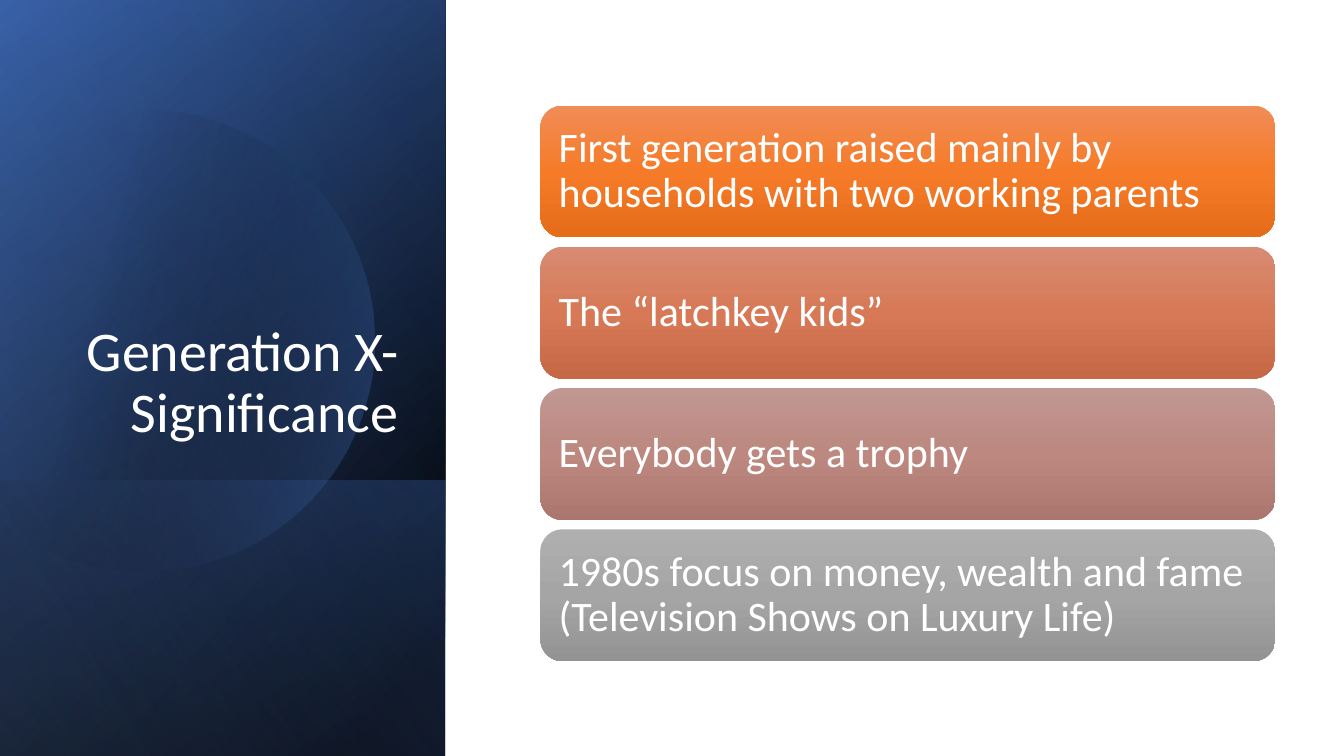
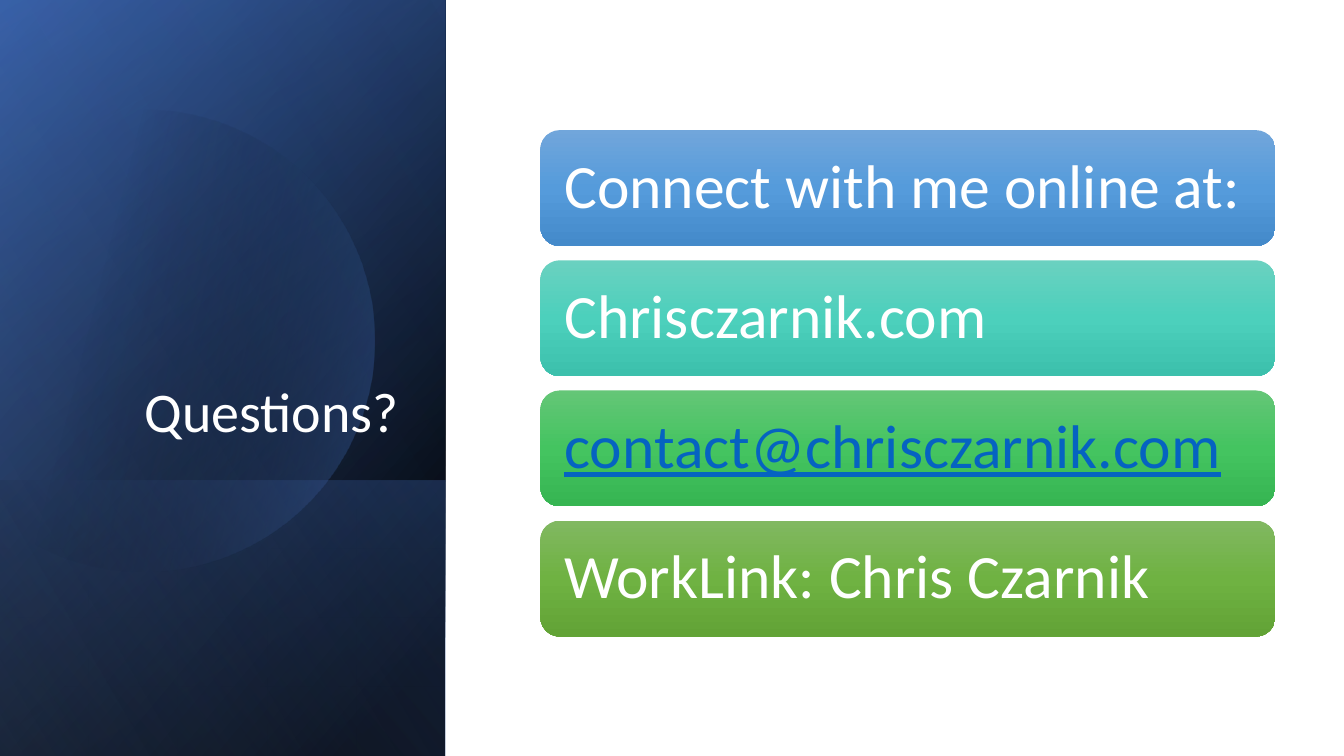
from math import acos, cos, sin

from lxml import etree
from pptx import Presentation
from pptx.dml.color import RGBColor
from pptx.enum.shapes import MSO_SHAPE as Shape
from pptx.enum.text import MSO_ANCHOR as Anchor, PP_ALIGN as Align
from pptx.oxml.ns import qn
from pptx.util import Cm, Pt

FONT = "Calibri"
WHITE = RGBColor(0xFF, 0xFF, 0xFF)
BLACK = RGBColor(0x00, 0x00, 0x00)
NAVY = RGBColor(0x2F, 0x55, 0x97)
BLUE = RGBColor(0x44, 0x72, 0xC4)
PALE_BLUE = RGBColor(0x8F, 0xAA, 0xDC)
LINK_BLUE = RGBColor(0x05, 0x63, 0xC1)

# Card gradients: top, middle, bottom
ORANGE = (RGBColor(0xF1, 0x8C, 0x57), RGBColor(0xF6, 0x7B, 0x28), RGBColor(0xE5, 0x6C, 0x19))
TERRACOTTA = (RGBColor(0xD7, 0x8B, 0x72), RGBColor(0xD7, 0x79, 0x56), RGBColor(0xC6, 0x68, 0x46))
ROSE = (RGBColor(0xC1, 0x97, 0x91), RGBColor(0xBC, 0x88, 0x80), RGBColor(0xAA, 0x76, 0x6E))
GREY = (RGBColor(0xAF, 0xAF, 0xAF), RGBColor(0xA5, 0xA5, 0xA5), RGBColor(0x93, 0x93, 0x93))
SKY = (RGBColor(0x71, 0xA6, 0xDB), RGBColor(0x55, 0x9B, 0xDB), RGBColor(0x44, 0x8A, 0xCA))
TEAL = (RGBColor(0x6A, 0xD1, 0xC0), RGBColor(0x4C, 0xD0, 0xBC), RGBColor(0x3C, 0xC0, 0xAC))
GREEN = (RGBColor(0x64, 0xC6, 0x77), RGBColor(0x44, 0xC4, 0x60), RGBColor(0x36, 0xB5, 0x52))
LIME = (RGBColor(0x81, 0xB8, 0x61), RGBColor(0x6F, 0xB2, 0x42), RGBColor(0x62, 0xA3, 0x36))

# Layout, in centimetres
SLIDE_W, SLIDE_H = 33.87, 19.05
PANEL_W = 11.22
BAND_H = 6.95
DISC_X, DISC_Y, DISC_R = 3.63, 8.59, 5.82
CARD_LEFT, CARD_W, CARDS_MIDDLE = 13.62, 18.52, 9.66

# Title, card height, gap, inset, text size, cards
SLIDES = [
    ("Generation X- Significance", 3.32, 0.24, 0.3, 30, [
        ("First generation raised mainly by households with two working parents", ORANGE),
        ("The “latchkey kids”", TERRACOTTA),
        ("Everybody gets a trophy", ROSE),
        ("1980s focus on money, wealth and fame (Television Shows on Luxury Life)", GREY),
    ]),
    ("Questions?", 2.92, 0.36, 0.46, 44, [
        ("Connect with me online at:", SKY),
        ("Chrisczarnik.com", TEAL),
        ("contact@chrisczarnik.com", GREEN),
        ("WorkLink: Chris Czarnik", LIME),
    ]),
]


def paint(shape, angle, stops):
    """Fill with (position %, colour, opacity %) stops; angle runs clockwise."""
    shape.shadow.inherit = False
    shape.line.fill.background()
    shape.fill.gradient()
    shape.fill.gradient_angle = 360 - angle
    stop_list = shape._element.spPr.find(".//" + qn("a:gsLst"))
    for default_stop in list(stop_list):
        stop_list.remove(default_stop)
    for position, colour, opacity in stops:
        stop = etree.SubElement(stop_list, qn("a:gs"), pos=str(position * 1000))
        rgb = etree.SubElement(stop, qn("a:srgbClr"), val=str(colour))
        if opacity < 100:
            etree.SubElement(rgb, qn("a:alpha"), val=str(opacity * 1000))


def add_layer(slide, height, angle, stops):
    """Panel layer of the given height at the foot of the slide, turned and mirrored."""
    middle = SLIDE_H - height / 2
    layer = slide.shapes.add_shape(
        Shape.RECTANGLE, Cm((PANEL_W - height) / 2), Cm(middle - PANEL_W / 2),
        Cm(height), Cm(PANEL_W))
    layer.rotation = 90
    layer._element.spPr.find(qn("a:xfrm")).set("flipH", "1")
    paint(layer, angle, stops)


prs = Presentation()
prs.slide_width, prs.slide_height = Cm(SLIDE_W), Cm(SLIDE_H)

# Disc outline, cut off by the left edge of the slide
half_arc = acos(-DISC_X / DISC_R)
arc_angles = [half_arc * (step / 60 - 1) for step in range(121)]
disc_points = [(Cm(DISC_X + DISC_R * cos(a)), Cm(DISC_Y + DISC_R * sin(a)))
               for a in arc_angles]

for heading, card_h, gap, inset, text_size, cards in SLIDES:
    slide = prs.slides.add_slide(prs.slide_layouts[6])

    # Side panel
    add_layer(slide, SLIDE_H, 50, [(8, BLACK, 100), (100, NAVY, 100)])
    add_layer(slide, SLIDE_H, 30, [(0, BLACK, 0), (99, BLUE, 46)])
    add_layer(slide, BAND_H, 130, [(2, BLUE, 29), (100, BLACK, 30)])
    outline = slide.shapes.build_freeform(*disc_points[0])
    outline.add_line_segments(disc_points[1:], close=True)
    paint(outline.convert_to_shape(), 14, [(29, BLACK, 0), (100, BLUE, 43)])
    add_layer(slide, SLIDE_H, 120, [(0, BLACK, 0), (99, PALE_BLUE, 11)])

    # Title
    title = slide.shapes.add_textbox(Cm(1.63), Cm(4.67), Cm(8.66), Cm(6.65)).text_frame
    title.word_wrap = True
    title.vertical_anchor = Anchor.BOTTOM
    line = title.paragraphs[0]
    line.text = heading
    line.alignment = Align.RIGHT
    line.line_spacing = 0.9
    line.font.name, line.font.size = FONT, Pt(40)
    line.font.color.rgb = WHITE

    # Cards, stacked around a common middle
    pitch = card_h + gap
    first_top = CARDS_MIDDLE - (len(cards) * pitch - gap) / 2
    for row, (wording, colours) in enumerate(cards):
        card = slide.shapes.add_shape(
            Shape.ROUNDED_RECTANGLE, Cm(CARD_LEFT), Cm(first_top + row * pitch),
            Cm(CARD_W), Cm(card_h))
        paint(card, 90, [(50 * i, colour, 100) for i, colour in enumerate(colours)])
        frame = card.text_frame
        frame.word_wrap = True
        frame.vertical_anchor = Anchor.MIDDLE
        frame.margin_left = frame.margin_right = Cm(inset)
        frame.margin_top = frame.margin_bottom = Cm(inset)
        line = frame.paragraphs[0]
        line.text = wording
        line.alignment = Align.LEFT
        line.line_spacing = 0.9
        line.font.name, line.font.size = FONT, Pt(text_size)
        is_address = "@" in wording
        line.font.color.rgb = LINK_BLUE if is_address else WHITE
        if is_address:
            line.font.underline = True

prs.save("out.pptx")
